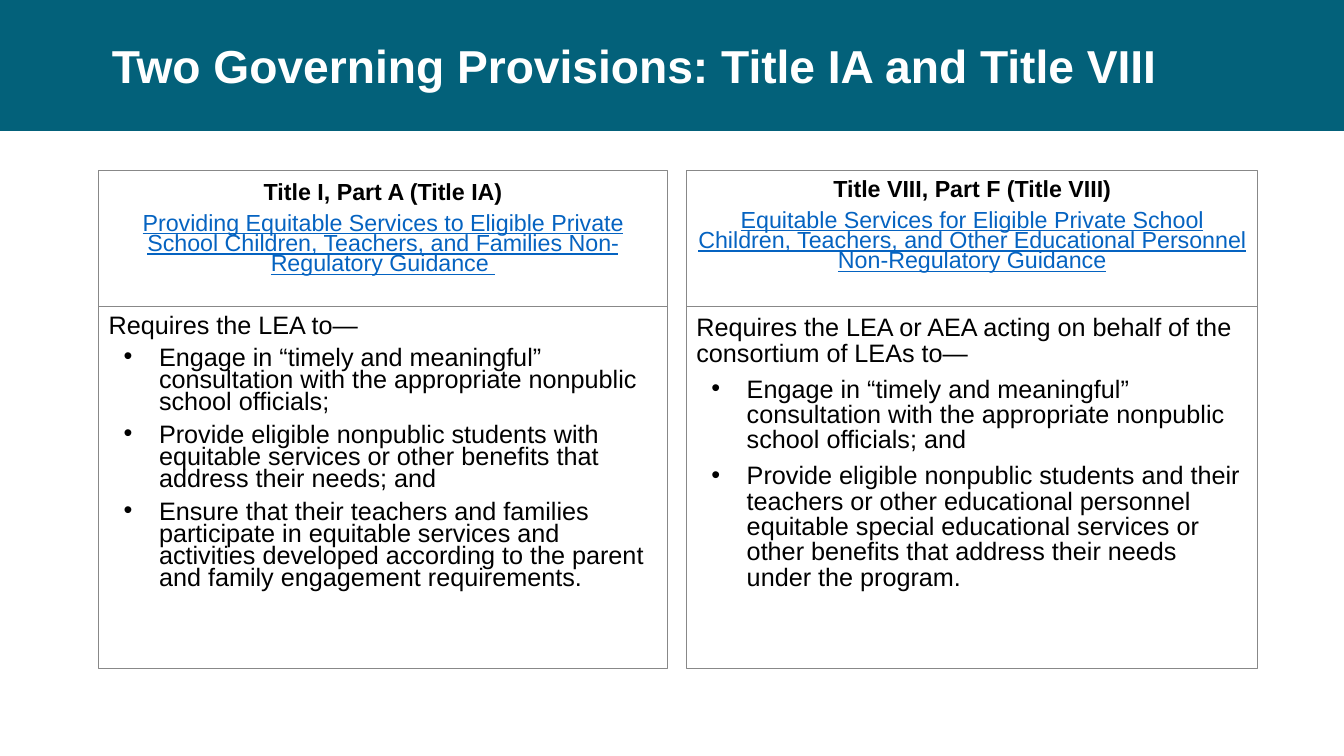
from pptx import Presentation
from pptx import util as u
from pptx.dml.color import RGBColor
from pptx.enum import shapes, text
from pptx.oxml.ns import qn
from lxml import etree

COLORS = {"banner": "03617A", "title": "FFFFFF", "body": "000000",
          "guidance": "0563C1", "border": "888888"}
FONT = "Arial"
SLIDE_W, SLIDE_H, BANNER_H = 960, 540, 93.6
PROVISION_TOP, HEADING_H, DUTIES_H = 122, 96.8, 258.5

PROVISIONS = [
    {"left": 70.5, "width": 406, "inset": 9.4, "spacing": 0.73,
     "name": "Title I, Part A (Title IA)",
     "guidance": "Providing Equitable Services to Eligible Private School Children, "
                 "Teachers, and Families Non-Regulatory Guidance ",
     "lead": "Requires the LEA to—",
     "duties": [
         "Engage in “timely and meaningful” consultation with the appropriate "
         "nonpublic school officials;",
         "Provide eligible nonpublic students with equitable services or other "
         "benefits that address their needs; and",
         "Ensure that their teachers and families participate in equitable services "
         "and activities developed according to the parent and family engagement "
         "requirements."]},
    {"left": 490.3, "width": 408, "inset": 7.2, "spacing": 0.84,
     "name": "Title VIII, Part F (Title VIII)",
     "guidance": "Equitable Services for Eligible Private School Children, Teachers, "
                 "and Other Educational Personnel Non-Regulatory Guidance",
     "lead": "Requires the LEA or AEA acting on behalf of the consortium of LEAs to—",
     "duties": [
         "Engage in “timely and meaningful” consultation with the appropriate "
         "nonpublic school officials; and",
         "Provide eligible nonpublic students and their teachers or other educational "
         "personnel equitable special educational services or other benefits that "
         "address their needs under the program."]},
]


def set_all(target, values):
    """Set every attribute named in a dict of format values."""
    for name, value in values.items():
        setattr(target, name, value)


def add_panel(slide, box, fill=None, border=None):
    """Draw a plain rectangle with an optional fill and border."""
    panel = slide.shapes.add_shape(shapes.MSO_SHAPE.RECTANGLE, *map(u.Pt, box))
    panel.shadow.inherit = False
    if fill:
        panel.fill.solid()
        panel.fill.fore_color.rgb = RGBColor.from_string(COLORS[fill])
    else:
        panel.fill.background()
    if border:
        panel.line.color.rgb = RGBColor.from_string(COLORS[border])
        panel.line.width = u.Pt(0.75)
    else:
        panel.line.fill.background()
    return panel


def prepare_frame(frame, inset, anchor):
    """Give a text frame equal insets, wrapping and an anchor."""
    sides = ("margin_left", "margin_top", "margin_right", "margin_bottom")
    set_all(frame, dict.fromkeys(sides, u.Pt(inset)))
    set_all(frame, {"word_wrap": True, "vertical_anchor": anchor})


def write_paragraph(paragraph, words, color, layout, **font):
    """Write one run in the slide font with the given formats."""
    set_all(paragraph, layout)
    run = paragraph.add_run()
    run.text = words
    set_all(run.font, {"name": FONT, **font})
    run.font.color.rgb = RGBColor.from_string(COLORS[color])


def add_bullet(paragraph):
    """Add a hanging round bullet."""
    props = paragraph._p.get_or_add_pPr()
    props.set("marL", str(u.Pt(36)))
    props.set("indent", str(u.Pt(-25.2)))
    etree.SubElement(props, qn("a:buFont")).set("typeface", FONT)
    etree.SubElement(props, qn("a:buChar")).set("char", "•")


def add_banner(slide, box, title):
    """Draw the banner with the slide title."""
    left, top, width, height = box
    add_panel(slide, box, fill="banner")
    headline = slide.shapes.add_textbox(
        *map(u.Pt, (left + 70.5, top, width - 132, height)))
    prepare_frame(headline.text_frame, 9.4, text.MSO_ANCHOR.MIDDLE)
    write_paragraph(headline.text_frame.paragraphs[0], title, "title", {},
                    size=u.Pt(33), bold=True)


def add_heading(slide, box, provision):
    """Draw the provision name above its guidance title."""
    frame = add_panel(slide, box, border="border").text_frame
    prepare_frame(frame, provision["inset"], text.MSO_ANCHOR.TOP)
    layout = {"alignment": text.PP_ALIGN.CENTER, "line_spacing": 0.73,
              "space_before": u.Pt(7.5)}
    write_paragraph(frame.paragraphs[0], provision["name"], "body", layout,
                    size=u.Pt(16.6), bold=True)
    write_paragraph(frame.add_paragraph(), provision["guidance"], "guidance", layout,
                    size=u.Pt(16.6), underline=True)


def add_duties(slide, box, provision):
    """Draw the lead sentence and its bulleted duties."""
    frame = add_panel(slide, box, border="border").text_frame
    prepare_frame(frame, 7.2, text.MSO_ANCHOR.TOP)
    layout = {"alignment": text.PP_ALIGN.LEFT, "space_before": u.Pt(7.5),
              "line_spacing": provision["spacing"]}
    write_paragraph(frame.paragraphs[0], provision["lead"], "body", layout,
                    size=u.Pt(18))
    for duty in provision["duties"]:
        paragraph = frame.add_paragraph()
        write_paragraph(paragraph, duty, "body", layout, size=u.Pt(18))
        add_bullet(paragraph)


def add_provision(slide, box, provision):
    """Stack the heading and duties of one provision."""
    left, top, width, height = box
    add_heading(slide, (left, top, width, HEADING_H), provision)
    add_duties(slide, (left, top + HEADING_H, width, height - HEADING_H), provision)


def main():
    """Build and save the slide."""
    deck = Presentation()
    set_all(deck, {"slide_width": u.Pt(SLIDE_W), "slide_height": u.Pt(SLIDE_H)})
    slide = deck.slides.add_slide(deck.slide_layouts[6])
    add_banner(slide, (0, 0, SLIDE_W, BANNER_H),
               "Two Governing Provisions: Title IA and Title VIII")
    for provision in PROVISIONS:
        box = (provision["left"], PROVISION_TOP, provision["width"],
               HEADING_H + DUTIES_H)
        add_provision(slide, box, provision)
    deck.save("out.pptx")


if __name__ == "__main__":
    main()
